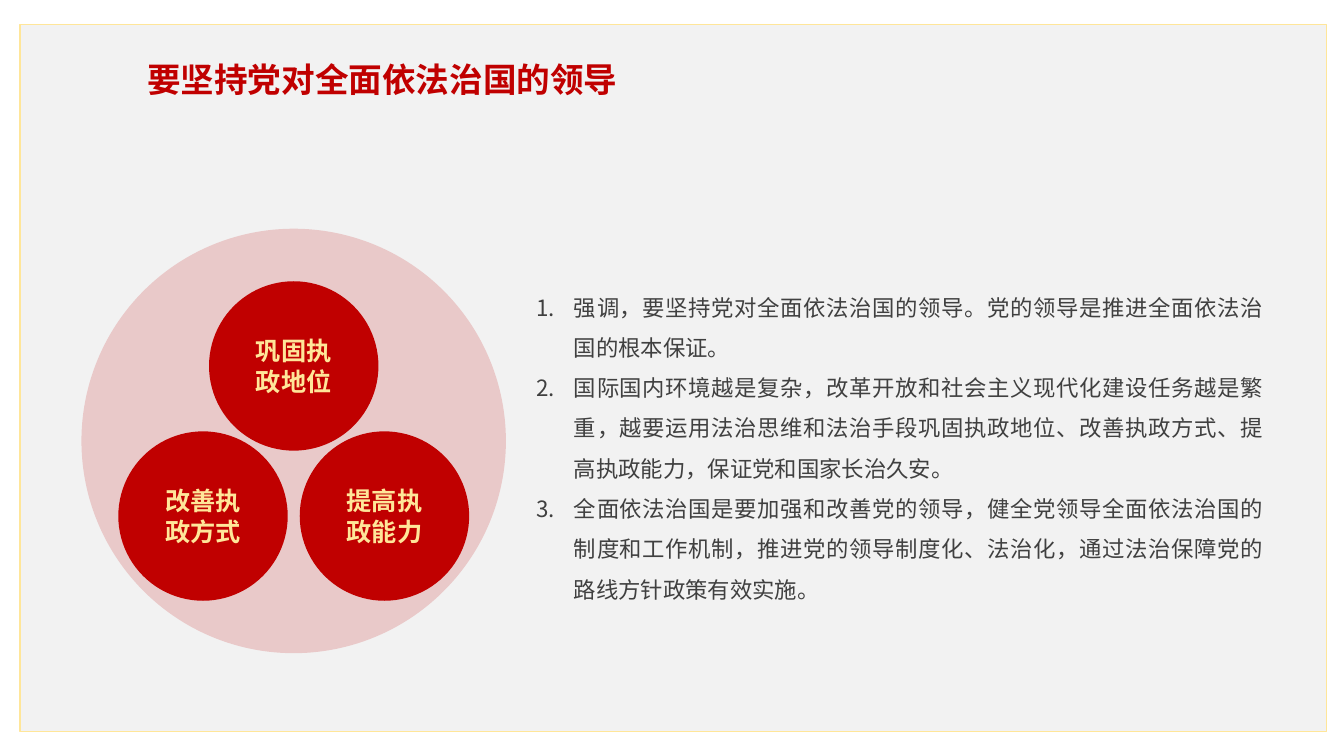
from lxml import etree
from pptx import Presentation
from pptx.dml.color import RGBColor
from pptx.enum.shapes import MSO_SHAPE
from pptx.enum.text import MSO_ANCHOR, PP_ALIGN
from pptx.oxml import parse_xml
from pptx.oxml.ns import nsdecls, qn
from pptx.util import Pt

RECTANGLE, OVAL = MSO_SHAPE.RECTANGLE, MSO_SHAPE.OVAL
TOP, MIDDLE = MSO_ANCHOR.TOP, MSO_ANCHOR.MIDDLE
LEFT, CENTER, JUSTIFY = PP_ALIGN.LEFT, PP_ALIGN.CENTER, PP_ALIGN.JUSTIFY

FONT = "Noto Sans CJK SC"
COLORS = {"panel": "F2F2F2", "gold": "FFE699", "red": "C00000", "body": "404040"}

TITLE = "要坚持党对全面依法治国的领导"
POINTS = [
    "强调，要坚持党对全面依法治国的领导。党的领导是推进全面依法治国的根本保证。",
    "国际国内环境越是复杂，改革开放和社会主义现代化建设任务越是繁重，"
    "越要运用法治思维和法治手段巩固执政地位、改善执政方式、提高执政能力，保证党和国家长治久安。",
    "全面依法治国是要加强和改善党的领导，健全党领导全面依法治国的制度和工作机制，"
    "推进党的领导制度化、法治化，通过法治保障党的路线方针政策有效实施。",
]
CENTER_X, CENTER_Y = 209.8, 315
OUTER_DIAMETER, GOAL_DIAMETER = 303.2, 121
GOALS = [  # label, offset of its centre from the outer circle's centre
    ("巩固执政地位", 0, -53.6),
    ("改善执政方式", -64.8, 53.6),
    ("提高执政能力", 64.8, 53.6),
]


def color(name):
    return RGBColor.from_string(COLORS[name])


def format_run(run, size, color_name, bold=False):
    run.font.size = Pt(size)
    run.font.bold = bold
    run.font.color.rgb = color(color_name)
    run.font.name = FONT
    etree.SubElement(run.font._element, qn("a:ea"), typeface=FONT)


def add_filled(slide, kind, left, top, width, height, fill):
    shape = slide.shapes.add_shape(kind, Pt(left), Pt(top), Pt(width), Pt(height))
    shape.shadow.inherit = False
    shape.fill.solid()
    shape.fill.fore_color.rgb = color(fill)
    shape.line.fill.background()
    return shape


def add_circle(slide, x, y, diameter):
    """Add a red circle centred on (x, y)."""
    return add_filled(slide, OVAL, x - diameter / 2, y - diameter / 2,
                      diameter, diameter, "red")


def add_panel(slide):
    """Add the framed panel behind everything else, the title included."""
    panel = add_filled(slide, RECTANGLE, 14.4, 17.3, 933.1, 505.4, "panel")
    panel.line.color.rgb = color("gold")
    panel.line.width = Pt(1)
    panel.element.getparent().insert(2, panel.element)


def set_title(slide):
    title = slide.shapes.title
    title.left, title.top, title.width, title.height = Pt(97.9), Pt(38.2), Pt(378.7), Pt(36)
    frame = title.text_frame
    frame.text = TITLE
    frame.vertical_anchor = TOP
    frame.word_wrap = True
    heading = frame.paragraphs[0]
    heading.alignment = LEFT
    run = heading.runs[0]
    format_run(run, 24, "red", bold=True)
    shadow = parse_xml(
        f'<a:effectLst {nsdecls("a")}><a:outerShdw blurRad="{Pt(4)}" dist="{Pt(3)}" dir="5400000">'
        '<a:srgbClr val="000000"><a:alpha val="45000"/></a:srgbClr></a:outerShdw></a:effectLst>')
    run.font._element.find(qn("a:solidFill")).addnext(shadow)


def add_goals(slide):
    outer = add_circle(slide, CENTER_X, CENTER_Y, OUTER_DIAMETER)
    tint = outer.element.spPr.find(qn("a:solidFill"))[0]
    etree.SubElement(tint, qn("a:alpha"), val="17000")
    for label, dx, dy in GOALS:
        goal = add_circle(slide, CENTER_X + dx, CENTER_Y + dy, GOAL_DIAMETER)
        frame = goal.text_frame
        frame.text = label
        frame.word_wrap = True
        frame.vertical_anchor = MIDDLE
        frame.paragraphs[0].alignment = CENTER
        format_run(frame.paragraphs[0].runs[0], 18, "gold", bold=True)


def add_points(slide):
    box = slide.shapes.add_textbox(Pt(383), Pt(200.2), Pt(519.8), Pt(229.7))
    frame = box.text_frame
    frame.margin_left = frame.margin_top = frame.margin_right = frame.margin_bottom = 0
    frame.word_wrap = True
    frame.text = "\n".join(POINTS)
    for point in frame.paragraphs:
        point.alignment = JUSTIFY
        point.line_spacing = 1.5
        properties = point._p.get_or_add_pPr()
        properties.set("marL", str(Pt(27)))
        properties.set("indent", str(-Pt(27)))
        etree.SubElement(properties, qn("a:buFont"), typeface=FONT)
        etree.SubElement(properties, qn("a:buAutoNum"), type="arabicPeriod")
        format_run(point.runs[0], 16, "body")


def main():
    deck = Presentation()
    deck.slide_width, deck.slide_height = Pt(960), Pt(540)
    slide = deck.slides.add_slide(deck.slide_layouts[5])
    add_panel(slide)
    set_title(slide)
    add_goals(slide)
    add_points(slide)
    deck.save("out.pptx")


if __name__ == "__main__":
    main()
